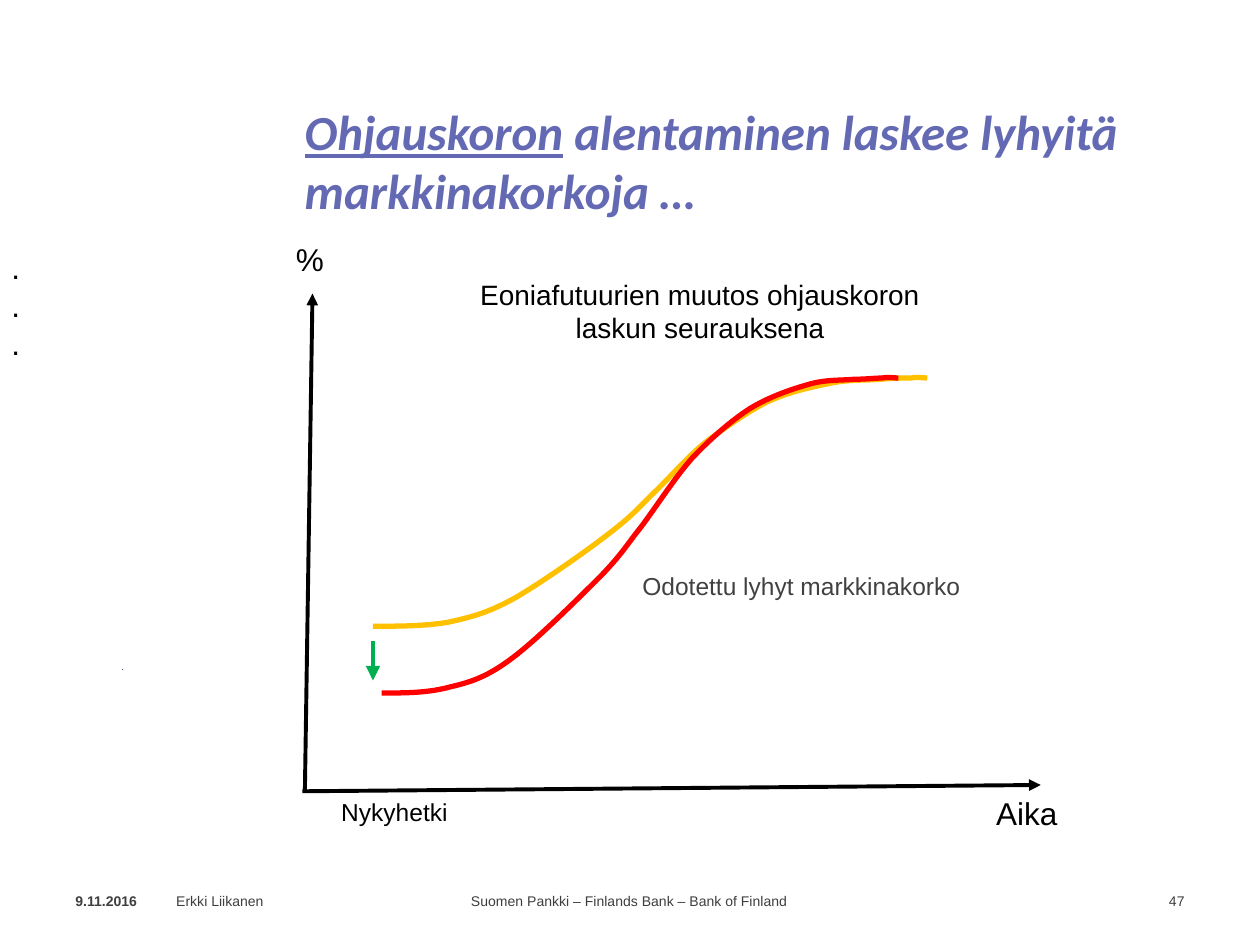
from lxml import etree
from pptx import Presentation, util as u
from pptx.dml.color import RGBColor
from pptx.enum import shapes, text
from pptx.oxml.ns import qn

BLACK = RGBColor(0, 0, 0)
GREY = RGBColor(0x41, 0x40, 0x42)
FOOTER_GREY = RGBColor(0x3F, 0x3E, 0x3E)
VIOLET = RGBColor(0x64, 0x69, 0xB3)
INDIGO = RGBColor(0x4D, 0x52, 0x9C)
AMBER = RGBColor(0xFF, 0xC0, 0)
RED = RGBColor(0xFF, 0, 0)
GREEN = RGBColor(0, 0xB0, 0x50)

LEFT, CENTER, RIGHT = (text.PP_ALIGN.LEFT, text.PP_ALIGN.CENTER,
                       text.PP_ALIGN.RIGHT)

# Start point, then two control points and an end point for each curve,
# measured from the top left corner of the chart
OLD_CURVE = [
    (0.72, 3.11), (0.92, 3.11), (1.12, 3.11), (1.31, 3.08),
    (1.49, 3.04), (1.62, 3.01), (1.84, 2.89), (2.05, 2.77), (2.42, 2.51),
    (2.6, 2.37), (2.78, 2.23), (2.81, 2.19), (2.93, 2.07),
    (3.06, 1.95), (3.21, 1.77), (3.36, 1.65), (3.52, 1.53), (3.69, 1.41),
    (3.85, 1.33), (4.02, 1.25), (4.21, 1.21), (4.36, 1.18),
    (4.51, 1.15), (4.65, 1.16), (4.75, 1.15), (4.86, 1.14), (4.92, 1.14),
    (4.99, 1.14), (5.05, 1.13), (5.08, 1.14), (5.12, 1.14)]
NEW_CURVE = [
    (0.79, 3.64), (0.98, 3.64), (1.16, 3.64), (1.34, 3.59),
    (1.51, 3.55), (1.63, 3.51), (1.83, 3.36), (2.03, 3.21), (2.37, 2.87),
    (2.54, 2.7), (2.71, 2.52), (2.73, 2.47), (2.85, 2.32),
    (2.97, 2.16), (3.11, 1.94), (3.25, 1.78), (3.39, 1.63), (3.55, 1.49),
    (3.7, 1.39), (3.86, 1.29), (4.04, 1.23), (4.18, 1.19),
    (4.32, 1.15), (4.44, 1.16), (4.54, 1.15), (4.64, 1.15), (4.7, 1.14),
    (4.76, 1.14), (4.82, 1.13), (4.85, 1.14), (4.89, 1.14)]


def add_text(page, area, paragraphs, align=LEFT, wrap=True, frame_format=None,
             **font_format):
    """Each paragraph is a list of (words, extra font values)."""
    box = page.shapes.add_textbox(*map(u.Inches, area))
    frame = box.text_frame
    frame.word_wrap = wrap
    for name, value in (frame_format or {}).items():
        setattr(frame, name, value)
    base = {"name": "Arial", "size": u.Pt(18), **font_format}
    color = base.pop("color", BLACK)
    for index, spans in enumerate(paragraphs):
        para = frame.paragraphs[0] if index == 0 else frame.add_paragraph()
        para.alignment = align
        for words, extra in spans:
            span = para.add_run()
            span.text = words
            span.font.color.rgb = color
            for name, value in {**base, **extra}.items():
                setattr(span.font, name, value)


def add_line(page, start, end, color, width, arrow=True):
    line = page.shapes.add_connector(
        shapes.MSO_CONNECTOR.STRAIGHT, *map(u.Inches, (*start, *end)))
    line.line.color.rgb = color
    line.line.width = u.Pt(width)
    if arrow:
        etree.SubElement(line.line._get_or_add_ln(), qn("a:tailEnd"),
                         type="triangle")
    etree.SubElement(line._element.spPr, qn("a:effectLst"))


def add_curve(page, points, color):
    """Draw the points, then join every three segments into one Bézier."""
    places = [(u.Inches(x), u.Inches(y)) for x, y in points]
    builder = page.shapes.build_freeform(*places[0])
    builder.add_line_segments(places[1:], close=False)
    curve = builder.convert_to_shape()
    segments = list(curve._element.iter(qn("a:lnTo")))
    for first in range(0, len(segments), 3):
        group = segments[first:first + 3]
        bezier = etree.Element(qn("a:cubicBezTo"))
        group[0].addprevious(bezier)
        for segment in group:
            bezier.append(segment[0])
            segment.getparent().remove(segment)
    curve.shadow.inherit = False
    curve.fill.background()
    curve.line.color.rgb = color
    curve.line.width = u.Pt(3)


def add_title(page, area):
    add_text(page, area,
             [[("Ohjauskoron", {"underline": True}),
               (" alentaminen laskee lyhyitä markkinakorkoja …", {})]],
             name="Calibri", size=u.Pt(28), bold=True, italic=True,
             color=VIOLET)


def add_margin_marks(page, left, top):
    add_text(page, (left, top, 0.07, 1.01), [[(".", {})]] * 3, RIGHT,
             frame_format={"margin_left": 0, "margin_right": 0})
    add_line(page, (left + 0.88, top + 3.4), (left + 0.88, top + 3.39),
             INDIGO, 0.75, arrow=False)


def add_rate_chart(page, left, top):
    def at(x, y):
        return left + x, top + y

    # Market rate before and after the cut
    for points, color in ((OLD_CURVE, AMBER), (NEW_CURVE, RED)):
        add_curve(page, [at(*point) for point in points], color)
    # Axes and the drop at the short end
    for start, end, color, width in (
            ((0.18, 4.42), (0.24, 0.47), BLACK, 2.25),
            ((0.16, 4.42), (6.02, 4.37), BLACK, 2.25),
            ((0.72, 3.23), (0.72, 3.54), GREEN, 2.75)):
        add_line(page, at(*start), at(*end), color, width)
    # Labels
    for words, place, extent, size, align, wrap, color in (
            ("%", (0, 0), (0.43, 0.4), 18, RIGHT, False, BLACK),
            ("Aika", (5.56, 4.39), (0.69, 0.4), 18, RIGHT, False, BLACK),
            ("Nykyhetki", (0.37, 4.42), (1.05, 0.34), 14, LEFT, False, BLACK),
            ("Odotettu lyhyt markkinakorko", (2.76, 2.62), (2.74, 0.34), 14,
             LEFT, False, GREY),
            ("Eoniafutuurien muutos ohjauskoron laskun seurauksena",
             (1.26, 0.29), (4.11, 0.64), 16, CENTER, True, BLACK)):
        add_text(page, (*at(*place), *extent), [[(words, {})]], align, wrap,
                 size=u.Pt(size), color=color)


def add_footer(page, top, height):
    for words, left, width, align, bold in (
            ("9.11.2016", 0.5, 0.8, LEFT, True),
            ("Erkki Liikanen", 1.3, 2.11, LEFT, False),
            ("Suomen Pankki – Finlands Bank – Bank of Finland", 3.53, 2.93,
             CENTER, False),
            ("47", 8.93, 0.57, RIGHT, False)):
        add_text(page, (left, top, width, height), [[(words, {})]], align,
                 frame_format={"vertical_anchor": text.MSO_ANCHOR.MIDDLE},
                 size=u.Pt(8), bold=bold, color=FOOTER_GREY)


def main():
    deck = Presentation()
    deck.slide_width, deck.slide_height = u.Inches(10), u.Inches(7.5)
    page = deck.slides.add_slide(deck.slide_layouts[6])
    add_margin_marks(page, 0.09, 1.92)
    add_title(page, (2.32, 0.76, 7.32, 1.51))
    add_rate_chart(page, 2.24, 1.86)
    add_footer(page, 6.95, 0.4)
    deck.save("out.pptx")


if __name__ == "__main__":
    main()
